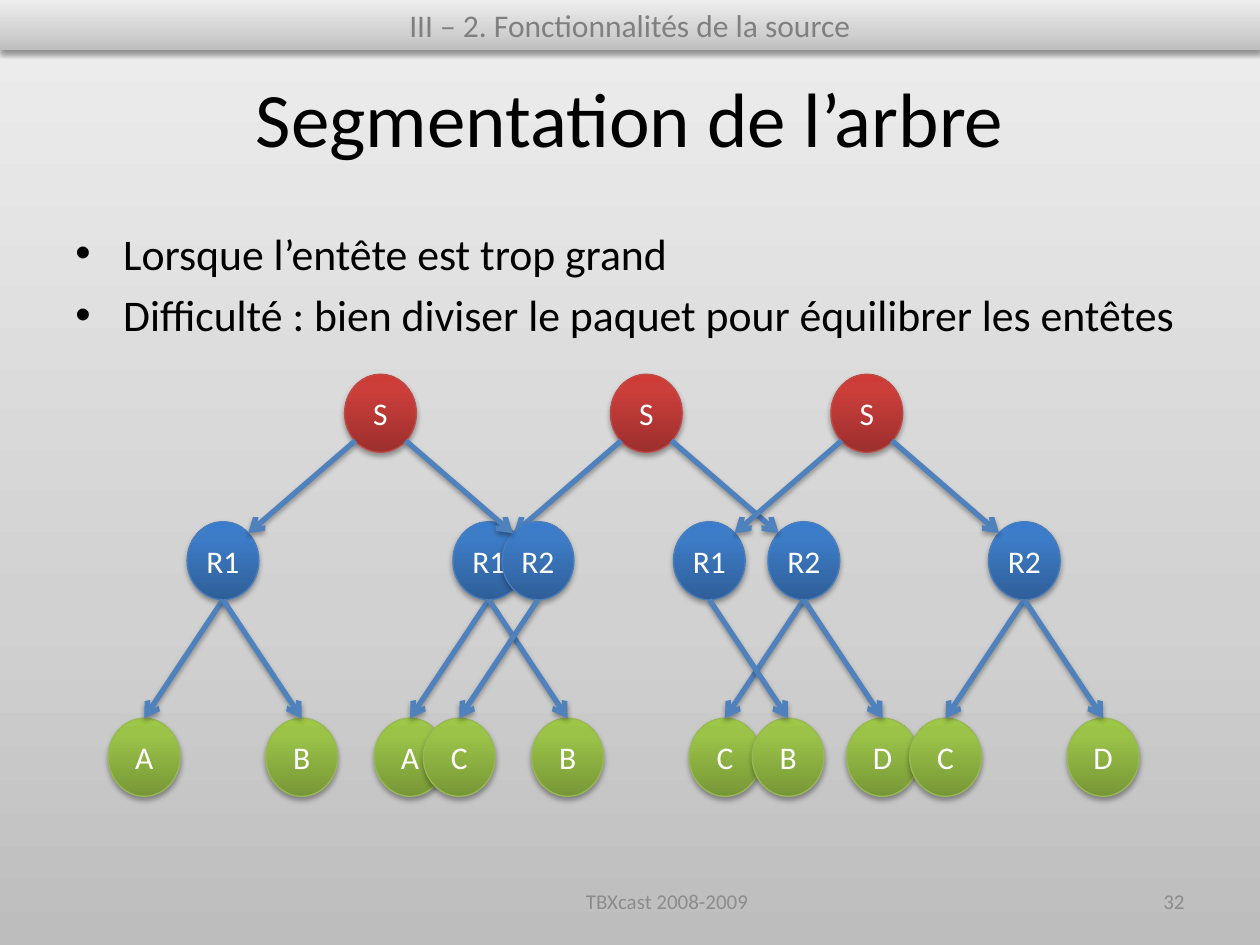
import lxml.etree
import pptx
import pptx.dml.color
import pptx.enum.shapes
import pptx.enum.text
import pptx.oxml.ns
import pptx.util

Inches = pptx.util.Inches
Pt = pptx.util.Pt
RGBColor = pptx.dml.color.RGBColor
ALIGN = pptx.enum.text.PP_ALIGN
ANCHOR = pptx.enum.text.MSO_ANCHOR
SHAPE = pptx.enum.shapes.MSO_SHAPE
qn = pptx.oxml.ns.qn

FONT = "Calibri"
BLACK = RGBColor(0x00, 0x00, 0x00)
WHITE = RGBColor(0xFF, 0xFF, 0xFF)
HEADER_GREY = RGBColor(0x80, 0x80, 0x80)
FOOTER_GREY = RGBColor(0x8C, 0x8C, 0x8C)
ARROW_BLUE = RGBColor(0x4F, 0x81, 0xBD)
RED_LINE = RGBColor(0xBF, 0x4C, 0x48)
BLUE_LINE = RGBColor(0x4B, 0x7E, 0xBC)
GREEN_LINE = RGBColor(0x98, 0xB9, 0x55)
GREY_STOPS = [(0, RGBColor(0xBD, 0xBD, 0xBD)), (35, RGBColor(0xD1, 0xD1, 0xD1)),
              (100, RGBColor(0xEE, 0xEE, 0xEE))]
RED_STOPS = [(0, RGBColor(0x9C, 0x2F, 0x2D)), (80, RGBColor(0xCB, 0x3E, 0x3A)),
             (100, RGBColor(0xCE, 0x3B, 0x37))]
BLUE_STOPS = [(0, RGBColor(0x2F, 0x5F, 0x99)), (80, RGBColor(0x3D, 0x7C, 0xC7)),
              (100, RGBColor(0x3A, 0x7C, 0xCB))]
GREEN_STOPS = [(0, RGBColor(0x77, 0x97, 0x37)), (80, RGBColor(0x9B, 0xC3, 0x48)),
               (100, RGBColor(0x9D, 0xC7, 0x46))]

NODE_WIDTH, NODE_HEIGHT = 0.57, 0.62
COLUMN_STEP = 0.625
SOURCE, ROUTER, LEAF = (0, RED_STOPS, RED_LINE), (1.17, BLUE_STOPS, BLUE_LINE), (2.73, GREEN_STOPS, GREEN_LINE)
NODES = {"S": (3, SOURCE), "R1": (1, ROUTER), "R2": (5, ROUTER),
         "A": (0, LEAF), "B": (2, LEAF), "C": (4, LEAF), "D": (6, LEAF)}
EDGES = {("S", "R1"): (3, 7), ("S", "R2"): (5, 1), ("R1", "A"): (4, 0),
         ("R1", "B"): (4, 0), ("R2", "C"): (4, 0), ("R2", "D"): (4, 0)}
ELLIPSE_SITES = {0: (0.5, 0), 1: (0.15, 0.15), 3: (0.15, 0.85),
                 4: (0.5, 1), 5: (0.85, 0.85), 7: (0.85, 0.15)}
TREE_TOP = 2.97
TREES = [(2.97, "S R1 R2 A B C D"), (0.86, "S R1 R2 A B C"), (4.72, "S R1 R2 B C D")]


def set_gradient(fill, parent, stops):
    """Fill with a vertical gradient whose stops run from bottom to top."""
    fill.gradient()
    fill.gradient_angle = 90
    stop_list = parent.find(qn("a:gradFill")).find(qn("a:gsLst"))
    for stop in list(stop_list):
        stop_list.remove(stop)
    for position, color in stops:
        stop = lxml.etree.SubElement(stop_list, qn("a:gs"), pos=str(position * 1000))
        lxml.etree.SubElement(stop, qn("a:srgbClr"), val=str(color))


def set_shadow(shape, opacity, distance):
    """Give a shape or connector a soft shadow straight below it."""
    properties = shape.element.spPr
    effects = properties.find(qn("a:effectLst"))
    if effects is None:
        effects = lxml.etree.SubElement(properties, qn("a:effectLst"))
    shadow = lxml.etree.SubElement(effects, qn("a:outerShdw"), blurRad=str(Pt(3.1)), dist=str(Pt(distance)),
                                   dir="5400000", rotWithShape="0")
    color = lxml.etree.SubElement(shadow, qn("a:srgbClr"), val=str(BLACK))
    lxml.etree.SubElement(color, qn("a:alpha"), val=str(opacity * 1000))


def format_paragraph(paragraph, size, color, alignment):
    """Set the alignment of a paragraph and the font of its runs."""
    paragraph.alignment = alignment
    for run in paragraph.runs:
        run.font.name = FONT
        run.font.size = Pt(size)
        run.font.color.rgb = color


def add_header(slide, left, top, width, height):
    """Add the section bar."""
    bar = slide.shapes.add_shape(SHAPE.RECTANGLE, Inches(left), Inches(top), Inches(width), Inches(height))
    set_gradient(bar.fill, bar.element.spPr, GREY_STOPS)
    bar.line.fill.background()
    bar.shadow.inherit = False
    set_shadow(bar, 38, 1.6)
    bar.text_frame.text = "III – 2. Fonctionnalités de la source"
    bar.text_frame.vertical_anchor = ANCHOR.TOP
    format_paragraph(bar.text_frame.paragraphs[0], 18, HEADER_GREY, ALIGN.CENTER)


def add_title(slide, left, top, width, height):
    """Place and format the title placeholder."""
    title = slide.shapes.title
    title.left, title.top, title.width, title.height = map(Inches, (left, top, width, height))
    title.text_frame.text = "Segmentation de l’arbre"
    title.text_frame.vertical_anchor = ANCHOR.MIDDLE
    format_paragraph(title.text_frame.paragraphs[0], 44, BLACK, ALIGN.CENTER)


def add_bullets(slide, left, top, width, height):
    """Add the bulleted statements."""
    box = slide.shapes.add_textbox(Inches(left), Inches(top), Inches(width), Inches(height))
    frame = box.text_frame
    frame.word_wrap = True
    frame.text = ("Lorsque l’entête est trop grand\n"
                  "Difficulté : bien diviser le paquet pour équilibrer les entêtes")
    for paragraph in frame.paragraphs:
        format_paragraph(paragraph, 25, BLACK, ALIGN.LEFT)
        paragraph.space_before = Pt(5)
        properties = paragraph._p.get_or_add_pPr()
        properties.set("marL", str(Inches(0.38)))
        properties.set("indent", str(-Inches(0.38)))
        lxml.etree.SubElement(properties, qn("a:buFont"), typeface="Arial")
        lxml.etree.SubElement(properties, qn("a:buChar"), char="•")


def add_footer_text(slide, left, top, width, height, text, alignment):
    """Add one grey footer entry."""
    box = slide.shapes.add_textbox(Inches(left), Inches(top), Inches(width), Inches(height))
    box.text_frame.word_wrap = True
    box.text_frame.vertical_anchor = ANCHOR.MIDDLE
    box.text_frame.text = text
    format_paragraph(box.text_frame.paragraphs[0], 12, FOOTER_GREY, alignment)


def add_node(slide, left, top, label, stops, line_color):
    """Add one labelled tree node."""
    node = slide.shapes.add_shape(SHAPE.OVAL, Inches(left), Inches(top), Inches(NODE_WIDTH), Inches(NODE_HEIGHT))
    set_gradient(node.fill, node.element.spPr, stops)
    node.line.color.rgb = line_color
    node.line.width = Pt(0.75)
    node.shadow.inherit = False
    set_shadow(node, 35, 1.8)
    frame = node.text_frame
    frame.text = label
    frame.word_wrap = False
    frame.margin_left = frame.margin_right = 0
    frame.vertical_anchor = ANCHOR.MIDDLE
    format_paragraph(frame.paragraphs[0], 18, WHITE, ALIGN.CENTER)
    return node


def site_position(node, site):
    """Return the slide position of a connection site of a node."""
    across, down = ELLIPSE_SITES[site]
    return int(node.left + across * node.width), int(node.top + down * node.height)


def add_edge(slide, parent, child, parent_site, child_site):
    """Join two nodes with an arrow glued to their connection sites."""
    edge = slide.shapes.add_connector(pptx.enum.shapes.MSO_CONNECTOR.STRAIGHT,
                                      *site_position(parent, parent_site), *site_position(child, child_site))
    edge.line.color.rgb = ARROW_BLUE
    edge.line.width = Pt(3)
    lxml.etree.SubElement(edge.line._get_or_add_ln(), qn("a:tailEnd"), type="arrow")
    set_shadow(edge, 35, 1.8)
    glue = edge.element.find(".//" + qn("p:cNvCxnSpPr"))
    for tag, node, site in (("a:stCxn", parent, parent_site), ("a:endCxn", child, child_site)):
        lxml.etree.SubElement(glue, qn(tag), id=str(node.shape_id), idx=str(site))


def add_tree(slide, left, top, labels):
    """Add the part of the multicast tree made of the given nodes."""
    nodes = {}
    for label in labels:
        column, (drop, stops, line_color) = NODES[label]
        nodes[label] = add_node(slide, left + column * COLUMN_STEP, top + drop, label, stops, line_color)
    for (parent, child), sites in EDGES.items():
        if parent in nodes and child in nodes:
            add_edge(slide, nodes[parent], nodes[child], *sites)


def main():
    """Build the slide and save it."""
    presentation = pptx.Presentation()
    presentation.slide_width, presentation.slide_height = Inches(10), Inches(7.5)
    slide = presentation.slides.add_slide(presentation.slide_layouts[5])
    background = slide.background.fill
    set_gradient(background, slide.element.find(".//" + qn("p:bgPr")), GREY_STOPS)
    add_title(slide, 0.5, 0.3, 9, 1.25)
    add_bullets(slide, 0.5, 1.75, 9, 4.95)
    add_footer_text(slide, 3.71, 6.95, 3.17, 0.4, "TBXcast 2008-2009", ALIGN.CENTER)
    add_footer_text(slide, 7.17, 6.95, 2.33, 0.4, "32", ALIGN.RIGHT)
    add_header(slide, 0, 0, 10, 0.4)
    for left, labels in TREES:
        add_tree(slide, left, TREE_TOP, labels.split())
    presentation.save("out.pptx")


if __name__ == "__main__":
    main()
